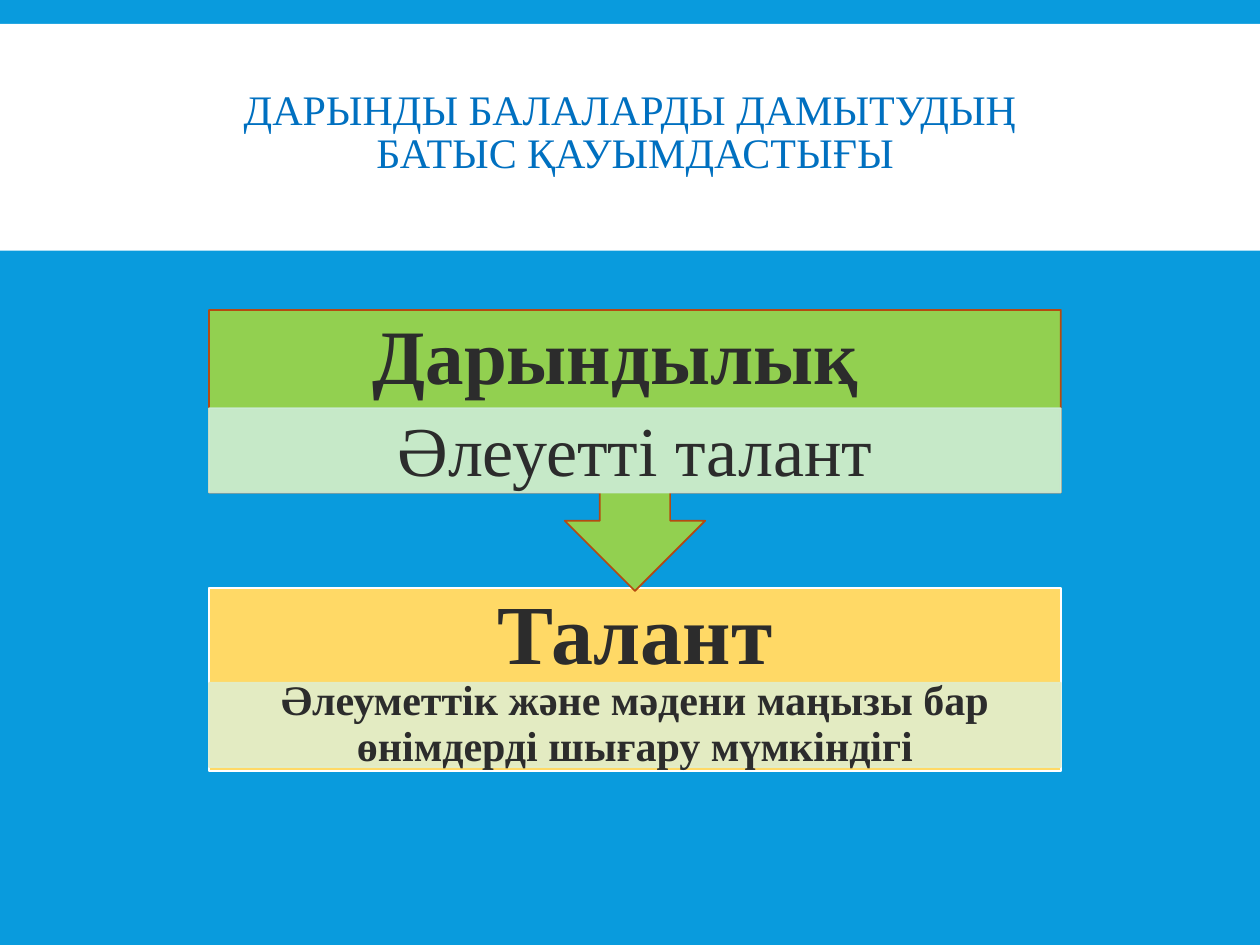
from lxml import etree
from pptx import Presentation
from pptx.dml.color import RGBColor
from pptx.enum.shapes import MSO_SHAPE
from pptx.enum.text import MSO_ANCHOR, MSO_AUTO_SIZE, PP_ALIGN
from pptx.oxml.ns import qn
from pptx.util import Pt

RECTANGLE = MSO_SHAPE.RECTANGLE
CALLOUT = MSO_SHAPE.UP_ARROW_CALLOUT
MIDDLE, TOP = MSO_ANCHOR.MIDDLE, MSO_ANCHOR.TOP
CENTER = PP_ALIGN.CENTER
NO_AUTOFIT = MSO_AUTO_SIZE.NONE
FONT = "Times New Roman"
LEFT, WIDTH = 119.5, 486.7
HEADING_HEIGHT, DETAIL_HEIGHT = 56.2, 48.2


def set_colour(target, colour, alpha=None):
    target.solid()
    target.fore_color.rgb = RGBColor.from_string(colour)
    if alpha:
        for node in target._xPr.iter(qn("a:srgbClr")):
            etree.SubElement(node, qn("a:alpha"), val=str(alpha * 1000))


def write_text(shape, text, size, colour, bold, spacing, anchor, inset_x, inset_y):
    frame = shape.text_frame
    frame.word_wrap = True
    frame.auto_size = NO_AUTOFIT
    frame.vertical_anchor = anchor
    frame.margin_left = frame.margin_right = Pt(inset_x)
    frame.margin_top = frame.margin_bottom = Pt(inset_y)
    para = frame.paragraphs[0]
    para.text = text
    para.alignment = CENTER
    para.line_spacing = spacing
    para.font.name = FONT
    para.font.size = Pt(size)
    para.font.bold = bold
    para.font.color.rgb = RGBColor.from_string(colour)


deck = Presentation()
deck.slide_width, deck.slide_height = Pt(720), Pt(540)
page = deck.slides.add_slide(deck.slide_layouts[5])
set_colour(page.background.fill, "099BDD")

title = page.shapes.title
title.left, title.top, title.width, title.height = Pt(2.9), Pt(41), Pt(720), Pt(71.3)
write_text(title, "ДАРЫНДЫ БАЛАЛАРДЫ ДАМЫТУДЫҢ \vБАТЫС ҚАУЫМДАСТЫҒЫ",
           24, "0070C0", False, 0.85, MIDDLE, 7.2, 3.6)

band = page.shapes.add_shape(RECTANGLE, 0, Pt(13.7), Pt(720), Pt(129.6))
band.shadow.inherit = False
set_colour(band.fill, "FFFFFF")
band.line.fill.background()
title.element.addprevious(band.element)

stages = [
    (RECTANGLE, 0, 336.2, 104.4, "FFD966", "FFFFFF", "Талант", 48, 26.6,
     390.2, "E1EECD", "Әлеуметтік және мәдени маңызы бар өнімдерді шығару мүмкіндігі",
     24, True, MIDDLE, 13.7, 2.2),
    (CALLOUT, 180, 177.1, 160.6, "92D050", "B54B11", "Дарындылық  ", 44, 24.5,
     233.3, "CCECD6", "Әлеуетті талант", 40, False, TOP, 22.3, 4.3),
]
for (kind, rotation, top, height, fill, outline, heading, heading_size, heading_inset,
     detail_top, detail_fill, detail, detail_size, detail_bold, anchor,
     inset_x, inset_y) in stages:
    block = page.shapes.add_shape(kind, Pt(LEFT), Pt(top), Pt(WIDTH), Pt(height))
    block.rotation = rotation
    block.shadow.inherit = False
    set_colour(block.fill, fill)
    set_colour(block.line.fill, outline)
    block.line.width = Pt(1)

    box = page.shapes.add_textbox(Pt(LEFT), Pt(top), Pt(WIDTH), Pt(HEADING_HEIGHT))
    write_text(box, heading, heading_size, "2C2C2C", True, 0.9, MIDDLE,
               heading_inset, heading_inset)

    panel = page.shapes.add_shape(RECTANGLE, Pt(LEFT), Pt(detail_top),
                                  Pt(WIDTH), Pt(DETAIL_HEIGHT))
    panel.shadow.inherit = False
    set_colour(panel.fill, detail_fill, 90)
    set_colour(panel.line.fill, detail_fill, 90)
    panel.line.width = Pt(1)
    write_text(panel, detail, detail_size, "2C2C2C", detail_bold, 0.9, anchor,
               inset_x, inset_y)

deck.save("out.pptx")
